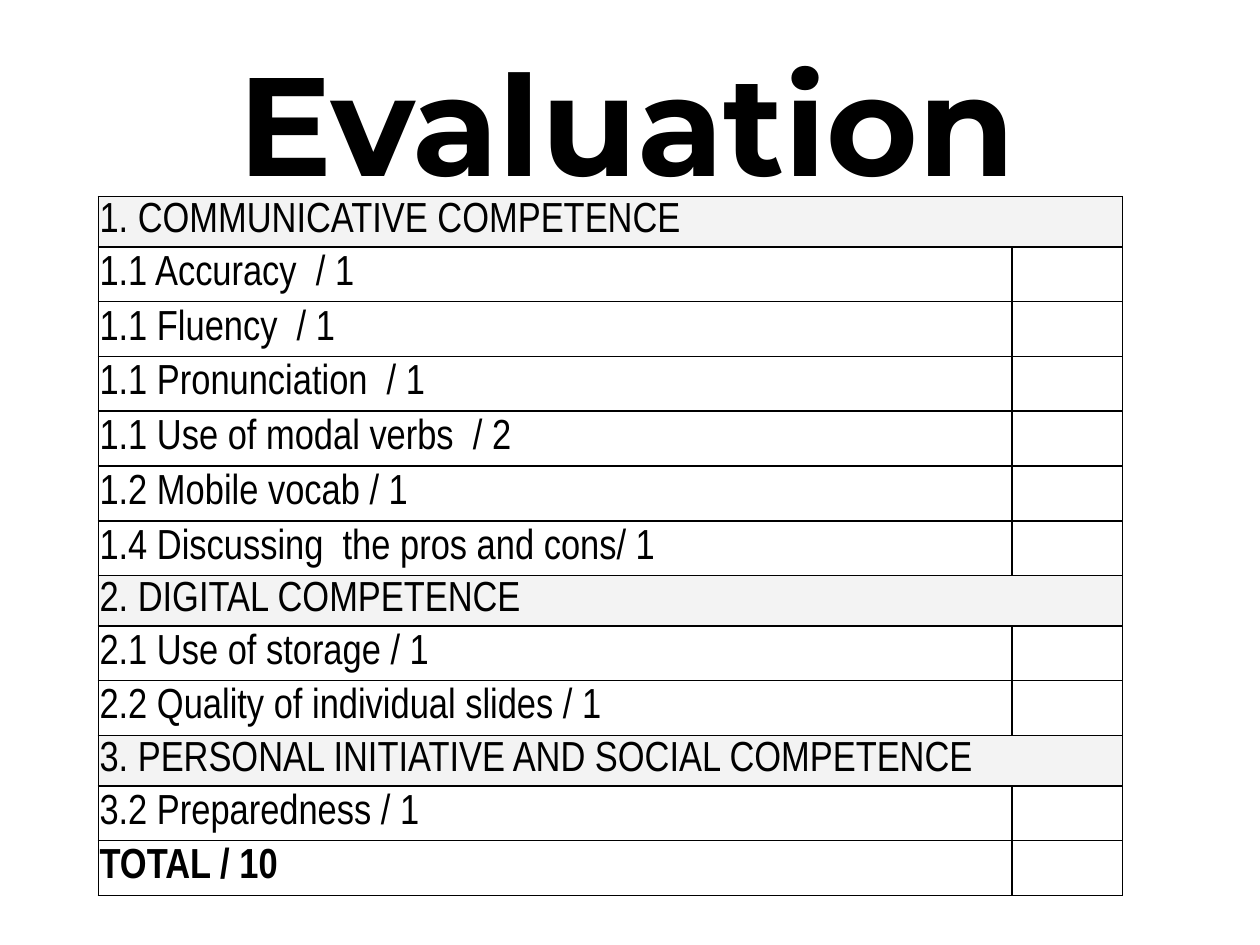
from lxml.etree import SubElement
from pptx import Presentation
from pptx.dml.color import RGBColor
from pptx.enum.text import MSO_ANCHOR as Anchor, MSO_AUTO_SIZE as AutoSize, PP_ALIGN as Align
from pptx.oxml.ns import qn
from pptx.util import Inches, Pt

TITLE = "Evaluation"
SECTIONS = [
    ("1. COMMUNICATIVE COMPETENCE", [
        "1.1 Accuracy  / 1",
        "1.1 Fluency  / 1",
        "1.1 Pronunciation  / 1",
        "1.1 Use of modal verbs  / 2",
        "1.2 Mobile vocab / 1",
        "1.4 Discussing  the pros and cons/ 1",
    ]),
    ("2. DIGITAL COMPETENCE", [
        "2.1 Use of storage / 1",
        "2.2 Quality of individual slides / 1",
    ]),
    ("3. PERSONAL INITIATIVE AND SOCIAL COMPETENCE", ["3.2 Preparedness / 1"]),
]
TOTAL = "TOTAL / 10"

BLACK, HEADING_FILL = "000000", "F3F3F3"
TITLE_BOX = (1.64, 0.23, 6.67, 1.45)
TABLE_BOX = (0.78, 1.56, 8.13, 5.55)
COLUMN_WIDTHS = (7.25, 0.88)
HEADING_HEIGHT = 0.4
CELL_FORMAT = {
    "vertical_anchor": Anchor.MIDDLE,
    "margin_left": Inches(0.01),
    "margin_right": Inches(0.01),
    "margin_top": 0,
    "margin_bottom": 0,
}


def color(value):
    return RGBColor.from_string(value)


def apply(target, values):
    for name, value in values.items():
        setattr(target, name, value)


def write(frame, text, font_name, size, bold=False):
    paragraph = frame.paragraphs[0]
    run = paragraph.add_run()
    run.text = text
    apply(run.font, {"name": font_name, "size": Pt(size), "bold": bold})
    run.font.color.rgb = color(BLACK)
    return paragraph


def add_borders(cell):
    properties = cell._tc.get_or_add_tcPr()
    for side in ("lnL", "lnR", "lnT", "lnB"):
        line = SubElement(properties, qn(f"a:{side}"), w=str(Pt(1)))
        fill = SubElement(line, qn("a:solidFill"))
        SubElement(fill, qn("a:srgbClr"), val=BLACK)


def add_title(slide):
    title = slide.shapes.title
    apply(title, dict(zip(("left", "top", "width", "height"), map(Inches, TITLE_BOX))))
    frame = title.text_frame
    apply(frame, {"word_wrap": False, "auto_size": AutoSize.NONE, "vertical_anchor": Anchor.MIDDLE})
    write(frame, TITLE, "Montserrat", 80, bold=True).alignment = Align.CENTER


def add_evaluation_table(slide):
    rows = []
    for heading, criteria in SECTIONS:
        rows.append((heading, True))
        rows += [(criterion, False) for criterion in criteria]
    rows.append((TOTAL, False))
    criterion_height = (TABLE_BOX[3] - HEADING_HEIGHT * len(SECTIONS)) / (len(rows) - len(SECTIONS))

    table = slide.shapes.add_table(len(rows), len(COLUMN_WIDTHS), *map(Inches, TABLE_BOX)).table
    apply(table, {"first_row": False, "horz_banding": False})
    for column, width in zip(table.columns, COLUMN_WIDTHS):
        column.width = Inches(width)

    for row, (text, is_heading) in zip(table.rows, rows):
        row.height = Inches(HEADING_HEIGHT if is_heading else criterion_height)
        label, score = row.cells
        for cell in (label, score):
            add_borders(cell)
            apply(cell, CELL_FORMAT)
            if is_heading:
                cell.fill.solid()
                cell.fill.fore_color.rgb = color(HEADING_FILL)
            else:
                cell.fill.background()
        if is_heading:
            label.merge(score)
        write(label.text_frame, text, "Arial Narrow", 24, bold=text == TOTAL)


def main():
    """Build the evaluation slide with its table of marks."""
    presentation = Presentation()
    apply(presentation, {"slide_width": Inches(10), "slide_height": Inches(7.5)})
    slide = presentation.slides.add_slide(presentation.slide_layouts[5])
    add_title(slide)
    add_evaluation_table(slide)
    presentation.save("out.pptx")


if __name__ == "__main__":
    main()
